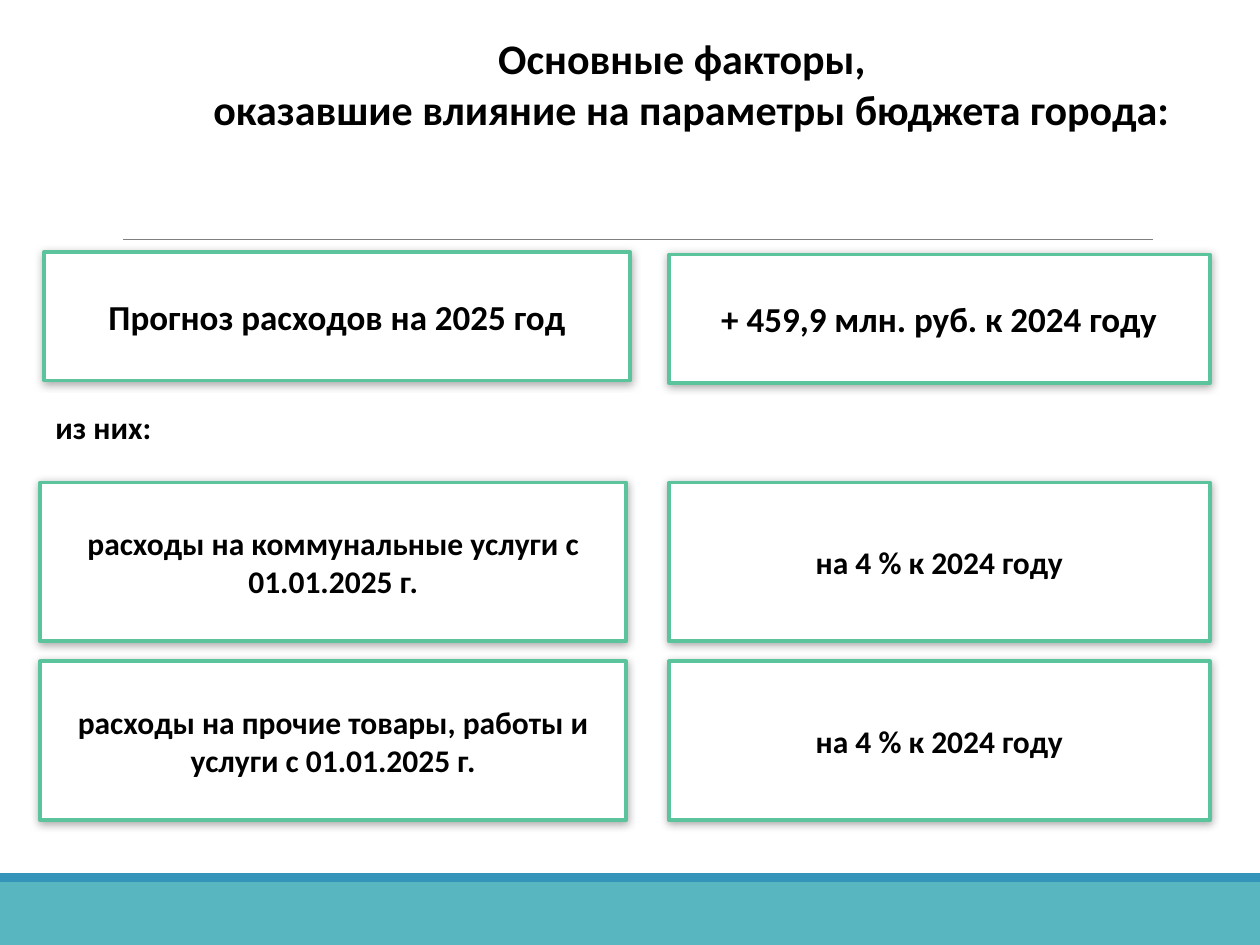
import pptx
import pptx.util
import pptx.dml.color
import pptx.enum.shapes
import pptx.enum.text
import pptx.oxml
import pptx.oxml.ns
from lxml import etree

Inches = pptx.util.Inches
Pt = pptx.util.Pt
RGBColor = pptx.dml.color.RGBColor
ALIGN = pptx.enum.text.PP_ALIGN
ANCHOR = pptx.enum.text.MSO_ANCHOR
qn = pptx.oxml.ns.qn

BLACK = RGBColor(0x00, 0x00, 0x00)
WHITE = RGBColor(0xFF, 0xFF, 0xFF)
GREY = RGBColor(0x80, 0x80, 0x80)
GREEN = RGBColor(0x5C, 0xC4, 0x9C)
TEAL = RGBColor(0x58, 0xB6, 0xC0)
BLUE = RGBColor(0x34, 0x94, 0xBA)

LEFT_W, RIGHT_X, RIGHT_W = 4.65, 5.31, 4.29
SHADOW_XML = (
    '<a:effectLst xmlns:a="http://schemas.openxmlformats.org/drawingml/2006/main">'
    '<a:outerShdw blurRad="63500" dist="12700" dir="5400000" rotWithShape="0">'
    '<a:srgbClr val="000000"><a:alpha val="32000"/></a:srgbClr>'
    '</a:outerShdw></a:effectLst>'
)


def inches(box):
    return [Inches(v) for v in box]


def write(tf, lines, size, align):
    tf.word_wrap = True
    font = {"name": "Calibri", "size": Pt(size), "bold": True}
    for i, line in enumerate(lines):
        p = tf.paragraphs[0] if i == 0 else tf.add_paragraph()
        p.alignment = align
        r = p.add_run()
        r.text = line
        for key, value in font.items():
            setattr(r.font, key, value)
        r.font.color.rgb = BLACK


def add_rect(s, box, fill):
    sp = s.shapes.add_shape(pptx.enum.shapes.MSO_SHAPE.RECTANGLE, *inches(box))
    sp.shadow.inherit = False
    sp.fill.solid()
    sp.fill.fore_color.rgb = fill
    sp.line.fill.background()
    return sp


def add_text(s, box, lines, size, align, indent=0.1):
    tf = s.shapes.add_textbox(*inches(box)).text_frame
    write(tf, lines, size, align)
    tf.margin_left = Inches(indent)


def add_card(s, box, text, size):
    sp = add_rect(s, box, WHITE)
    sp.line.color.rgb = GREEN
    sp.line.width = Pt(2.25)
    props = sp._element.spPr
    props.replace(props.find(qn("a:effectLst")), pptx.oxml.parse_xml(SHADOW_XML))
    sp.text_frame.vertical_anchor = ANCHOR.MIDDLE
    write(sp.text_frame, [text], size, ALIGN.CENTER)


def add_rule(s, x, y, w):
    line = s.shapes.add_connector(
        pptx.enum.shapes.MSO_CONNECTOR.STRAIGHT, *inches((x, y, x + w, y)))
    line.line.color.rgb = GREY
    line.line.width = Pt(0.5)
    etree.SubElement(line._element.spPr, qn("a:effectLst"))


def add_footer(s, x, y, w, h, stripe=0.07):
    add_rect(s, (x, y + stripe, w, h - stripe), TEAL)
    add_rect(s, (x, y, w, stripe), BLUE)


def add_forecast(s, x, y, h):
    add_card(s, (x, y, LEFT_W, h), "Прогноз расходов на 2025 год", 20)
    add_card(s, (RIGHT_X, y + 0.02, RIGHT_W, h), "+ 459,9 млн. руб. к 2024 году", 20)


def add_factors(s, x, y, h, pitch):
    factors = (
        ("расходы на коммунальные услуги с 01.01.2025 г.", "на 4 % к 2024 году"),
        ("расходы на прочие товары, работы и услуги с 01.01.2025 г.", "на 4 % к 2024 году"),
    )
    for i, (factor, change) in enumerate(factors):
        top = y + i * pitch
        add_card(s, (x, top, LEFT_W, h), factor, 18)
        add_card(s, (RIGHT_X, top, RIGHT_W, h), change, 18)


def main():
    prs = pptx.Presentation()
    prs.slide_width, prs.slide_height = Inches(10), Inches(7.5)
    s = prs.slides.add_slide(prs.slide_layouts[6])
    add_rule(s, 0.98, 1.9, 8.17)
    add_footer(s, 0, 6.93, 10, 0.57)
    add_forecast(s, 0.35, 2, 1.02)
    add_factors(s, 0.32, 3.83, 1.26, 1.42)
    add_text(s, (0.3, 3.19, 1.26, 0.4), ["из них:"], 18, ALIGN.LEFT, 0.14)
    title = ["Основные факторы, ", " оказавшие влияние на параметры бюджета города:"]
    add_text(s, (1.07, 0.21, 8.76, 1.65), title, 24, ALIGN.CENTER)
    prs.save("out.pptx")


if __name__ == "__main__":
    main()
